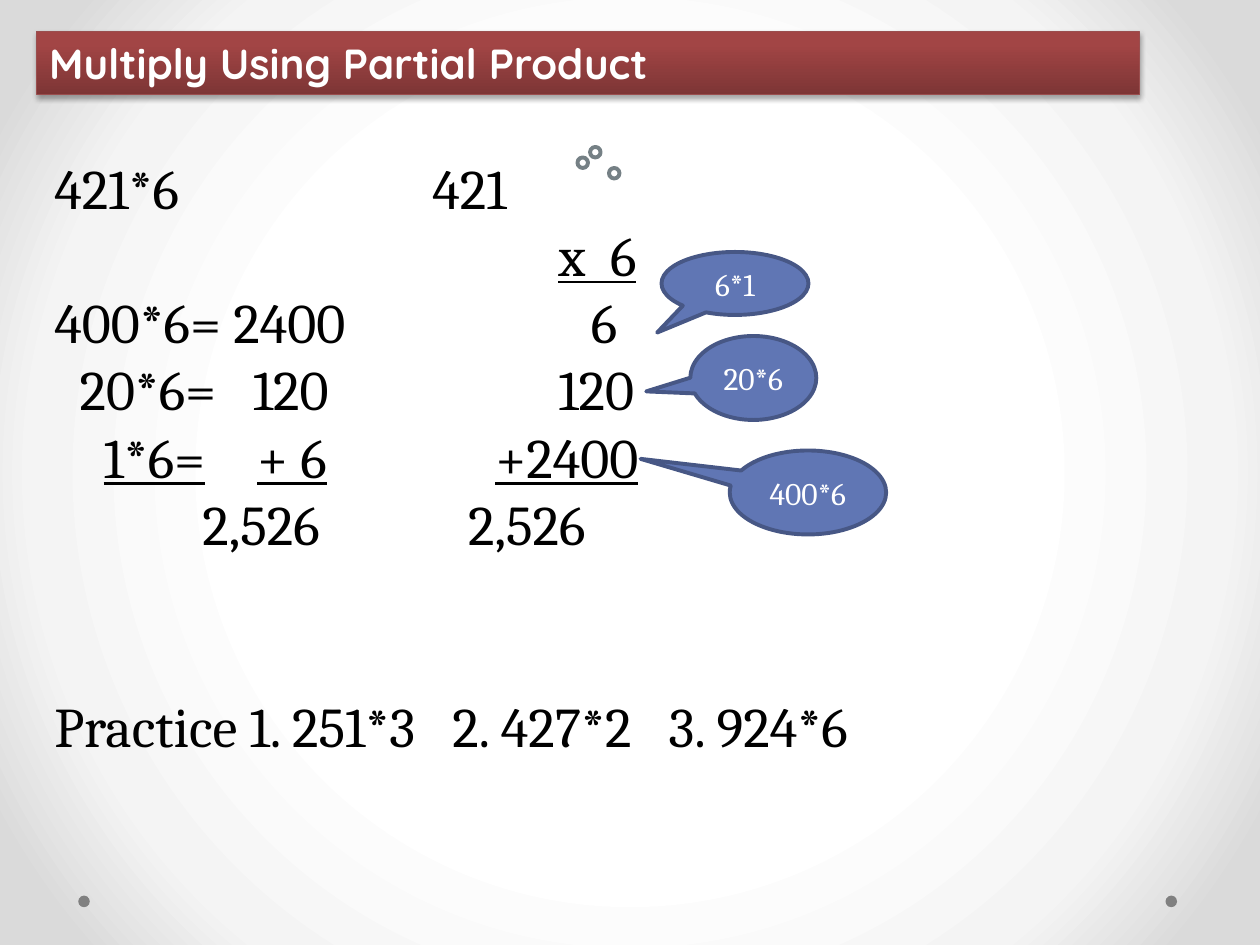
"""Builds a one-slide lesson on multiplying with partial products."""
from dataclasses import dataclass

from pptx import Presentation
from pptx.dml.color import RGBColor
from pptx.enum.shapes import MSO_SHAPE as Preset
from pptx.enum.text import MSO_ANCHOR as Anchor, PP_ALIGN as Align
from pptx.oxml import parse_xml
from pptx.oxml.ns import nsdecls, qn
from pptx.util import Inches, Pt


@dataclass(frozen=True)
class Theme:
    ink: str = "000000"
    paper: str = "FFFFFF"
    dot: str = "808080"
    ring: str = "758085"
    callout: str = "6076B4"
    callout_edge: str = "475785"
    banner_edge: str = "9A4E4E"
    banner: tuple = ((0, "7D3535"), (80, "A24545"), (100, "A44343"))
    backdrop: tuple = ((50, "FFFFFF"), (76, "F4F4F4"), (92, "DADADA"))
    body_font: str = "Cambria"
    title_font: str = "Quicksand"
    body: int = 32
    title: int = 24
    label: int = 18
    thick: float = 2.25
    thin: float = 0.75


def gradient(stops, direction):
    listed = "".join(
        f'<a:gs pos="{share * 1000}"><a:srgbClr val="{color}"/></a:gs>'
        for share, color in stops)
    return (f'<a:gradFill {nsdecls("a")} rotWithShape="1">'
            f'<a:gsLst>{listed}</a:gsLst>{direction}</a:gradFill>')


def write(paragraph, text, *, font, size, color, bold=False,
          underline=False, align=Align.LEFT):
    paragraph.alignment = align
    run = paragraph.add_run()
    run.text = text
    run.font.name, run.font.size = font, Pt(size)
    run.font.bold, run.font.underline = bold, underline
    run.font.color.rgb = RGBColor.from_string(color)


class Lesson:
    def __init__(self, theme, columns=120, rows=90):
        self.theme = theme
        self.deck = Presentation()
        self.deck.slide_width, self.deck.slide_height = Inches(10), Inches(7.5)
        self.column = self.deck.slide_width / columns
        self.row = self.deck.slide_height / rows
        self.slide = self.deck.slides.add_slide(self.deck.slide_layouts[6])

    def place(self, left, top, width, height):
        return (round(left * self.column), round(top * self.row),
                round(width * self.column), round(height * self.row))

    def backdrop(self):
        center = ('<a:path path="circle"><a:fillToRect l="50000" t="50000" '
                  'r="50000" b="50000"/></a:path>')
        self.slide.element.find(qn("p:cSld")).insert(0, parse_xml(
            f'<p:bg {nsdecls("p", "a")}><p:bgPr>'
            f'{gradient(self.theme.backdrop, center)}'
            '<a:effectLst/></p:bgPr></p:bg>'))

    def shape(self, preset, box, fill, edge=None, weight=0):
        drawn = self.slide.shapes.add_shape(preset, *self.place(*box))
        drawn.shadow.inherit = False
        drawn.fill.solid()
        drawn.fill.fore_color.rgb = RGBColor.from_string(fill)
        if edge:
            drawn.line.color.rgb = RGBColor.from_string(edge)
            drawn.line.width = Pt(weight)
        else:
            drawn.line.fill.background()
        return drawn

    def dot(self, left, top):
        self.shape(Preset.OVAL, (left, top, 1.1, 1.1), self.theme.dot)

    def ring(self, left, top):
        self.shape(Preset.FLOWCHART_CONNECTOR, (left, top, 1, 1),
                   self.theme.paper, self.theme.ring, self.theme.thick)

    def banner(self, text, box):
        theme = self.theme
        bar = self.shape(Preset.RECTANGLE, box, theme.banner[0][1],
                         theme.banner_edge, theme.thin)
        properties = bar.element.spPr
        solid = properties.find(qn("a:solidFill"))
        properties.replace(solid, parse_xml(
            gradient(theme.banner, '<a:lin ang="16200000" scaled="0"/>')))
        properties.find(qn("a:effectLst")).append(parse_xml(
            f'<a:outerShdw {nsdecls("a")} blurRad="{Pt(3.1)}" '
            f'dist="{Pt(1.8)}" dir="5400000" rotWithShape="0">'
            f'<a:srgbClr val="{theme.ink}"><a:alpha val="35000"/>'
            '</a:srgbClr></a:outerShdw>'))
        bar.text_frame.word_wrap = True
        bar.text_frame.vertical_anchor = Anchor.MIDDLE
        write(bar.text_frame.paragraphs[0], text, font=theme.title_font,
              size=theme.title, color=theme.paper, bold=True)

    def callout(self, text, box, tip):
        theme = self.theme
        bubble = self.shape(Preset.OVAL_CALLOUT, box, theme.callout,
                            theme.callout_edge, theme.thick)
        bubble.adjustments[0], bubble.adjustments[1] = tip
        bubble.text_frame.word_wrap = True
        bubble.text_frame.vertical_anchor = Anchor.MIDDLE
        write(bubble.text_frame.paragraphs[0], text, font=theme.body_font,
              size=theme.label, color=theme.paper, align=Align.CENTER)

    def set_stops(self, paragraph, columns):
        stops = "".join(f'<a:tab pos="{round(column * self.column)}" algn="l"/>'
                        for column in columns)
        paragraph._p.get_or_add_pPr().append(
            parse_xml(f'<a:tabLst {nsdecls("a")}>{stops}</a:tabLst>'))

    def working(self, lines, box):
        theme = self.theme
        frame = self.slide.shapes.add_textbox(*self.place(*box)).text_frame
        frame.word_wrap = True
        for index, (gap, parts) in enumerate(lines):
            paragraph = frame.add_paragraph() if index else frame.paragraphs[0]
            paragraph.space_before = Pt(gap)
            self.set_stops(paragraph, [part[0] for part in parts if part[0]])
            for column, text, tab_rule, text_rule in parts:
                style = dict(font=theme.body_font, size=theme.body,
                             color=theme.ink)
                if column:
                    write(paragraph, "\t", underline=tab_rule, **style)
                write(paragraph, text, underline=text_rule, **style)


def plain(column, text):
    return column, text, False, False


def ruled(column, text, from_left=False):
    return column, text, from_left, True


def main():
    lesson = Lesson(Theme())
    lesson.backdrop()
    for left in (111, 7.45):
        lesson.dot(left, 85.3)
    lesson.working([
        (0, [plain(0, "421*6"), plain(36, "421")]),
        (0, [ruled(48, "x  6")]),
        (0, [plain(0, "400*6= 2400"), plain(51.1, "6")]),
        (0, [plain(2.4, "20*6="), plain(18.9, "120"), plain(48, "120")]),
        (0, [ruled(4.7, "1*6=", True), ruled(19.3, "+ 6", True),
             ruled(42, "+2400")]),
        (0, [plain(14.1, "2,526"), plain(39.4, "2,526")]),
        (77, [plain(0, "Practice 1. 251*3"), plain(37.9, "2. 427*2"),
              plain(58.5, "3. 924*6")]),
    ], (4, 14, 109, 66))
    lesson.banner("Multiply Using Partial Product", (3.5, 3, 105, 6))
    for left, top in ((58, 16), (55, 15), (56.2, 14)):
        lesson.ring(left, top)
    for text, box, tip in (
            ("6*1", (63, 24, 14, 6), (-0.53, 0.78)),
            ("20*6", (65.75, 32, 12, 8), (-0.85, 0.16)),
            ("400*6", (69.5, 42.9, 14.9, 8), (-1.07, -0.4))):
        lesson.callout(text, box, tip)
    lesson.deck.save("out.pptx")


if __name__ == "__main__":
    main()
